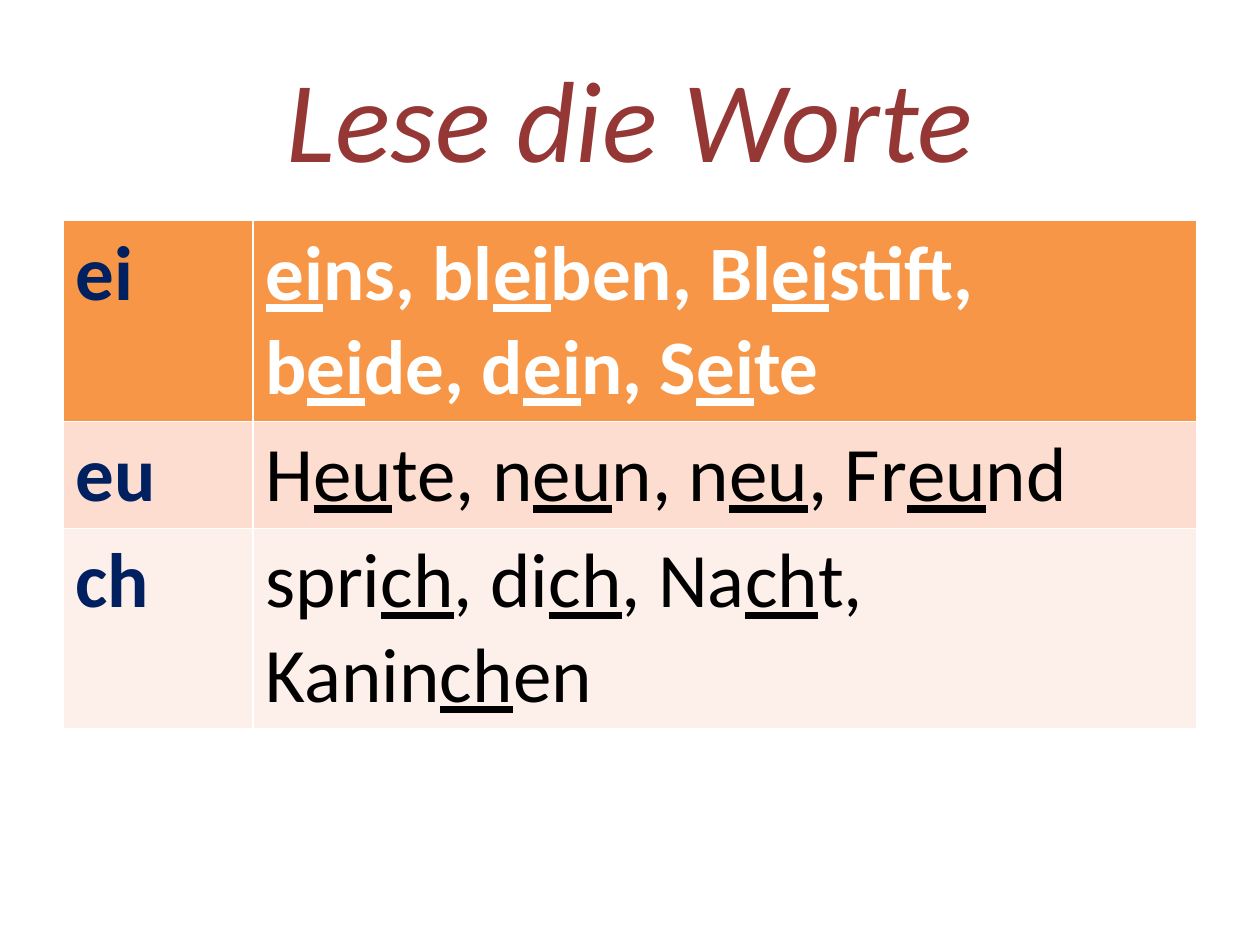
from dataclasses import dataclass

from pptx import Presentation
from pptx.dml.color import RGBColor
from pptx.enum.text import MSO_ANCHOR, PP_ALIGN
from pptx.table import _Cell as Cell
from pptx.util import Cm, Pt

FONT = "Calibri"
TITLE_RED = RGBColor(0x95, 0x37, 0x35)
NAVY = RGBColor(0x00, 0x20, 0x60)
WHITE = RGBColor(0xFF, 0xFF, 0xFF)
BLACK = RGBColor(0x00, 0x00, 0x00)
ORANGE = RGBColor(0xF7, 0x96, 0x46)
PEACH = RGBColor(0xFC, 0xDD, 0xCF)
PALE_PEACH = RGBColor(0xFD, 0xEF, 0xE9)

LEFT, WIDTH = Cm(1.27), Cm(22.86)
TABLE_TOP, TABLE_HEIGHT = Cm(4.45), Cm(10.08)
SOUND_WIDTH = Cm(3.83)
ROW_HEIGHT = Cm(1.03)


@dataclass
class SoundRow:
    sound: str
    words: str
    fill: RGBColor
    color: RGBColor = BLACK
    bold: bool = False


ROWS = [
    SoundRow("ei", "eins, bleiben, Bleistift, beide, dein, Seite", ORANGE, WHITE, True),
    SoundRow("eu", "Heute, neun, neu, Freund", PEACH),
    SoundRow("ch", "sprich, dich, Nacht, Kaninchen", PALE_PEACH),
]


def add_run(p, text: str, *, size: float, color: RGBColor, bold: bool = False,
            italic: bool = False, underline: bool = False) -> None:
    r = p.add_run()
    r.text = text
    font = r.font
    font.name, font.size = FONT, Pt(size)
    font.bold, font.italic, font.underline = bold, italic, underline
    font.color.rgb = color


def fill_cell(cell: Cell, color: RGBColor) -> None:
    cell.fill.solid()
    cell.fill.fore_color.rgb = color


def add_title(s, text: str) -> None:
    title = s.shapes.title
    title.left, title.top, title.width, title.height = LEFT, Cm(0.76), WIDTH, Cm(3.18)
    tf = title.text_frame
    tf.vertical_anchor = MSO_ANCHOR.MIDDLE
    p = tf.paragraphs[0]
    p.alignment = PP_ALIGN.CENTER
    add_run(p, text, size=66, color=TITLE_RED, italic=True)


def write_words(cell: Cell, row: SoundRow) -> None:
    p = cell.text_frame.paragraphs[0]
    for i, part in enumerate(row.words.split(row.sound)):
        if i:
            add_run(p, row.sound, size=44, color=row.color, bold=row.bold, underline=True)
        if part:
            add_run(p, part, size=44, color=row.color, bold=row.bold)


def add_sound_table(s, rows: list[SoundRow]) -> None:
    frame = s.shapes.add_table(len(rows), 2, LEFT, TABLE_TOP, WIDTH, TABLE_HEIGHT)
    table = frame.table
    table.columns[0].width = SOUND_WIDTH
    table.columns[1].width = WIDTH - SOUND_WIDTH
    for i, row in enumerate(rows):
        table.rows[i].height = ROW_HEIGHT
        sound_cell, words_cell = table.cell(i, 0), table.cell(i, 1)
        fill_cell(sound_cell, row.fill)
        fill_cell(words_cell, row.fill)
        add_run(sound_cell.text_frame.paragraphs[0], row.sound, size=44, color=NAVY, bold=True)
        write_words(words_cell, row)
    frame.height = TABLE_HEIGHT


def main() -> None:
    prs = Presentation()
    prs.slide_width, prs.slide_height = Cm(25.4), Cm(19.05)
    s = prs.slides.add_slide(prs.slide_layouts[5])
    add_title(s, "Lese die Worte")
    add_sound_table(s, ROWS)
    prs.save("out.pptx")


if __name__ == "__main__":
    main()
